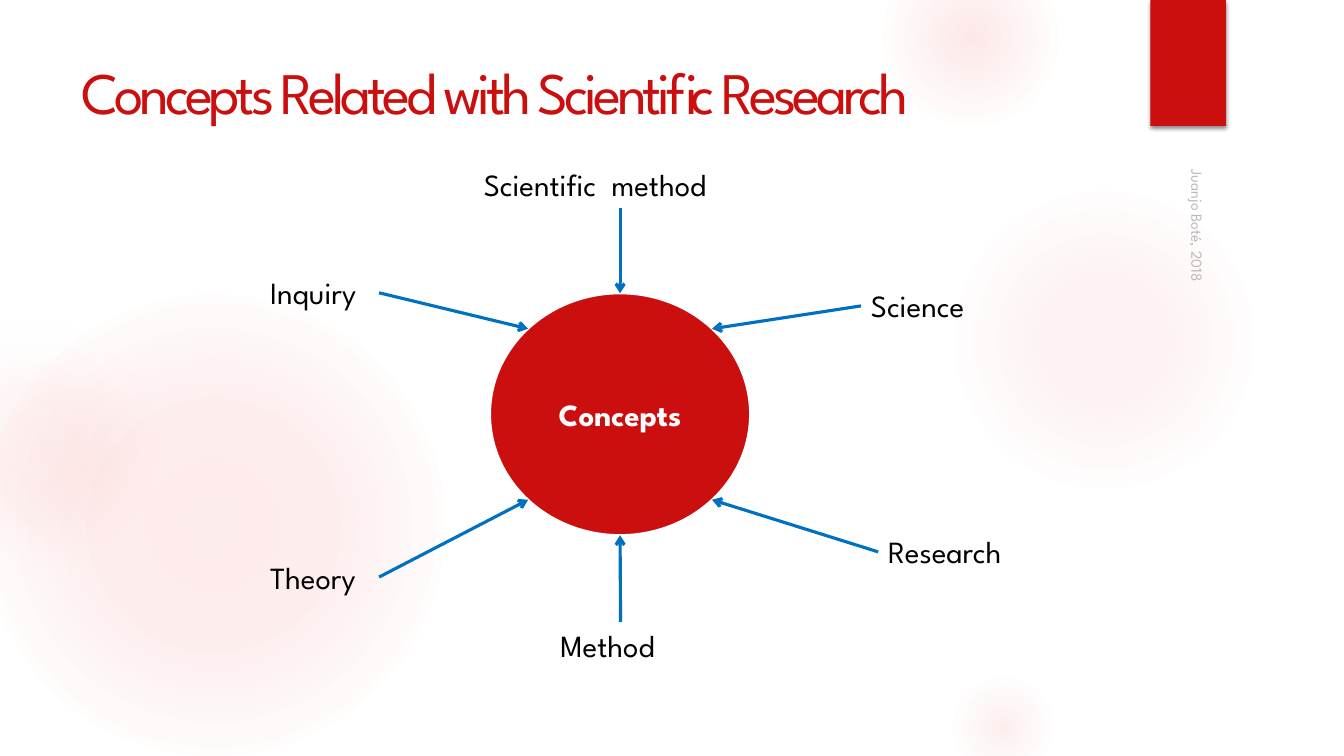
from math import cos, radians, sin

from lxml.etree import SubElement
from pptx import Presentation
from pptx.dml.color import RGBColor
from pptx.enum.shapes import MSO_CONNECTOR, MSO_SHAPE
from pptx.enum.text import MSO_ANCHOR, MSO_AUTO_SIZE, PP_ALIGN
from pptx.oxml import parse_xml
from pptx.oxml.ns import nsdecls, qn
from pptx.util import Inches, Pt

RED = RGBColor(0xCB, 0x0F, 0x0F)
WHITE = RGBColor(0xFF, 0xFF, 0xFF)
BLACK = RGBColor(0, 0, 0)
BLUE = RGBColor(0, 0x70, 0xC0)
GRAY = RGBColor(0x8C, 0x8C, 0x8C)
GLOW = RGBColor(0xF3, 0x5C, 0x5C)
PALE = RGBColor(0xF3, 0xF3, 0xF3)
FONT = "League Spartan"

presentation = Presentation()
presentation.slide_width = Inches(13.33)
presentation.slide_height = Inches(7.5)
slide = presentation.slides.add_slide(presentation.slide_layouts[6])
shapes = slide.shapes


def write_text(shape, text, size, color, bold=False, align=PP_ALIGN.LEFT,
               anchor=MSO_ANCHOR.TOP, wrap=True, spacing=None, alpha=None):
    frame = shape.text_frame
    frame.word_wrap = wrap
    frame.vertical_anchor = anchor
    if not wrap:
        frame.auto_size = MSO_AUTO_SIZE.SHAPE_TO_FIT_TEXT
    paragraph = frame.paragraphs[0]
    paragraph.alignment = align
    run = paragraph.add_run()
    run.text = text
    run.font.name = FONT
    run.font.size = Pt(size)
    run.font.bold = bold
    run.font.color.rgb = color
    properties = run.font._element
    if spacing is not None:
        properties.set("spc", str(spacing * 100))
    if alpha is not None:
        color_element = properties.find(".//" + qn("a:srgbClr"))
        SubElement(color_element, qn("a:alpha"), val=str(alpha * 1000))


def add_filled(kind, left, top, width, height, color):
    shape = shapes.add_shape(kind, Inches(left), Inches(top), Inches(width), Inches(height))
    shape.shadow.inherit = False
    shape.fill.solid()
    shape.fill.fore_color.rgb = color
    shape.line.fill.background()
    return shape


# Soft background glows: left, top, diameter, stops of (position, color, opacity)
glows = [
    (-0.17, 2.92, 4.58, [(0, GLOW, 11), (36, GLOW, 10), (75, GLOW, 0)]),
    (-0.92, 3.17, 2.58, [(0, GLOW, 8), (36, GLOW, 5), (71, PALE, 0)]),
    (9.41, 1.83, 3.08, [(0, GLOW, 7), (36, GLOW, 6), (69, GLOW, 0)]),
    (8.75, -0.5, 1.75, [(0, GLOW, 14), (36, GLOW, 7), (73, GLOW, 0)]),
    (9.41, 6.67, 1.08, [(0, GLOW, 10), (31, GLOW, 5), (66, GLOW, 0)]),
]
for left, top, diameter, stops in glows:
    glow = add_filled(MSO_SHAPE.OVAL, left, top, diameter, diameter, GLOW)
    stop_xml = "".join(
        f'<a:gs pos="{position * 1000}"><a:srgbClr val="{color}">'
        f'<a:alpha val="{opacity * 1000}"/></a:srgbClr></a:gs>'
        for position, color, opacity in stops)
    gradient = parse_xml(
        f'<a:gradFill {nsdecls("a")} rotWithShape="1"><a:gsLst>{stop_xml}</a:gsLst>'
        '<a:path path="circle"><a:fillToRect l="50000" t="50000" r="50000" b="50000"/>'
        '</a:path></a:gradFill>')
    properties = glow._element.spPr
    properties.replace(properties.find(qn("a:solidFill")), gradient)

# Red tab with a small shadow
tab = add_filled(MSO_SHAPE.RECTANGLE, 11.41, 0, 0.75, 1.25, RED)
effects = tab._element.spPr.find(qn("a:effectLst"))
effects.append(parse_xml(
    f'<a:outerShdw {nsdecls("a")} blurRad="{Pt(3)}" dist="{Pt(2)}" dir="5400000" '
    'rotWithShape="0"><a:srgbClr val="000000"><a:alpha val="45000"/></a:srgbClr>'
    '</a:outerShdw>'))

# Title
title = shapes.add_textbox(Inches(0.71), Inches(0.5), Inches(11.71), Inches(1.53))
write_text(title, "Concepts Related with Scientific Research", 42, RED, spacing=-3)

# Central circle
center_x, center_y, radius_x, radius_y = 6.15, 4.11, 1.29, 1.2
hub = add_filled(MSO_SHAPE.OVAL, center_x - radius_x, center_y - radius_y,
                 2 * radius_x, 2 * radius_y, RED)
hub.line.color.rgb = WHITE
hub.line.width = Pt(1.5)
write_text(hub, "Concepts", 22, WHITE, bold=True, align=PP_ALIGN.CENTER,
           anchor=MSO_ANCHOR.MIDDLE)

# Concepts: text, left, top, width, side the arrow leaves, angle where it meets the circle
concepts = [
    ("Science", 8.54, 2.8, 1.4, 1, -45),
    ("Research", 8.71, 5.24, 1.6, 1, 45),
    ("Method", 5.46, 6.17, 1.39, 0, 90),
    ("Theory", 2.58, 5.49, 1.18, 3, 135),
    ("Inquiry", 2.58, 2.67, 1.18, 3, 225),
    ("Scientific  method", 4.7, 1.59, 2.9, 2, 270),
]
for text, left, top, width, side, angle in concepts:
    label = shapes.add_textbox(Inches(left), Inches(top), Inches(width), Inches(0.47))
    write_text(label, text, 22, BLACK, wrap=False)

    end_x = Inches(center_x + radius_x * cos(radians(angle)))
    end_y = Inches(center_y + radius_y * sin(radians(angle)))
    arrow = shapes.add_connector(MSO_CONNECTOR.STRAIGHT, end_x, end_y, end_x, end_y)
    arrow.begin_connect(label, side)
    arrow.line.color.rgb = BLUE
    arrow.line.width = Pt(2.25)
    SubElement(arrow.line._get_or_add_ln(), qn("a:tailEnd"), type="arrow")
    SubElement(arrow._element.spPr, qn("a:effectLst"))

# Vertical credit
credit = shapes.add_textbox(Inches(9.79), Inches(3.53), Inches(4.22), Inches(0.33))
credit.rotation = 90
write_text(credit, "Juanjo Boté, 2018", 11, GRAY, anchor=MSO_ANCHOR.BOTTOM, alpha=60)

presentation.save("out.pptx")
